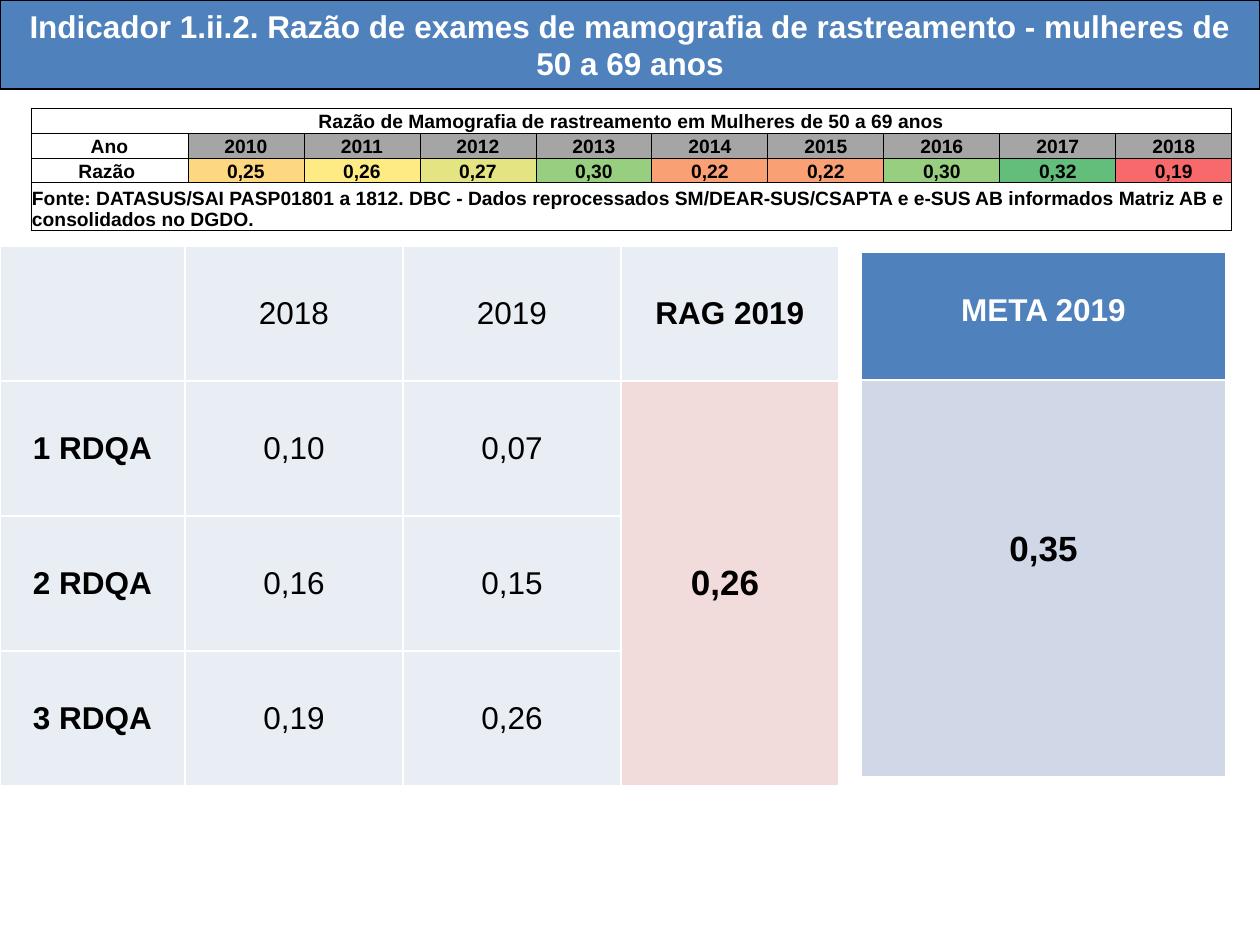
from dataclasses import dataclass
from typing import Optional

from lxml import etree
from pptx import Presentation
from pptx.dml.color import RGBColor
from pptx.enum.shapes import MSO_SHAPE
from pptx.enum.text import MSO_ANCHOR, PP_ALIGN
from pptx.oxml.ns import qn
from pptx.util import Emu, Pt

PX_PER_INCH = 126
RECT = MSO_SHAPE.RECTANGLE
CENTER, LEFT = PP_ALIGN.CENTER, PP_ALIGN.LEFT
TOP, MIDDLE, BOTTOM = MSO_ANCHOR.TOP, MSO_ANCHOR.MIDDLE, MSO_ANCHOR.BOTTOM

BLACK = RGBColor(0x00, 0x00, 0x00)
WHITE = RGBColor(0xFF, 0xFF, 0xFF)
BLUE = RGBColor(0x4F, 0x81, 0xBD)
PALE_BLUE = RGBColor(0xE9, 0xED, 0xF4)
LIGHT_BLUE = RGBColor(0xD0, 0xD8, 0xE8)
PINK = RGBColor(0xF2, 0xDC, 0xDB)
GRAY = RGBColor(0xA5, 0xA5, 0xA5)
AMBER = RGBColor(0xFD, 0xD8, 0x80)
YELLOW = RGBColor(0xFF, 0xEB, 0x84)
LIME = RGBColor(0xE5, 0xE4, 0x83)
GREEN = RGBColor(0x98, 0xCE, 0x7F)
ORANGE = RGBColor(0xFA, 0xA0, 0x75)
DARK_GREEN = RGBColor(0x63, 0xBE, 0x7B)
RED = RGBColor(0xF8, 0x69, 0x6B)

TITLE = ("Indicador 1.ii.2. Razão de exames de mamografia de rastreamento "
         "- mulheres de 50 a 69 anos")
HISTORY_TITLE = "Razão de Mamografia de rastreamento em Mulheres de 50 a 69 anos"
SOURCE = ("Fonte: DATASUS/SAI PASP01801 a 1812. DBC - Dados reprocessados "
          "SM/DEAR-SUS/CSAPTA e e-SUS AB informados Matriz AB e consolidados no DGDO.")
RATIOS = [("0,25", AMBER), ("0,26", YELLOW), ("0,27", LIME), ("0,30", GREEN),
          ("0,22", ORANGE), ("0,22", ORANGE), ("0,30", GREEN),
          ("0,32", DARK_GREEN), ("0,19", RED)]
FIRST_YEAR = 2010


@dataclass
class Cell:
    text: str = ""
    fill: Optional[RGBColor] = None
    size: int = 18
    bold: bool = True
    color: RGBColor = BLACK
    align: PP_ALIGN = CENTER
    anchor: MSO_ANCHOR = MIDDLE
    margin_top: int = 0
    margin_side: int = 0
    rows: int = 1
    cols: int = 1


@dataclass
class Grid:
    left: int
    top: int
    widths: list[int]
    heights: list[int]
    border: RGBColor
    border_pt: float
    cells: dict[tuple[int, int], Cell]


def px(n: int) -> Emu:
    return Emu(round(n * 914400 / PX_PER_INCH))


def write(tf, text: str, size: int, bold: bool, color: RGBColor, align: PP_ALIGN) -> None:
    p = tf.paragraphs[0]
    p.alignment = align
    r = p.add_run()
    r.text = text
    for name, value in {"name": "Arial", "size": Pt(size), "bold": bold}.items():
        setattr(r.font, name, value)
    r.font.color.rgb = color


def set_borders(cell, color: RGBColor, width_pt: float) -> None:
    tc_pr = cell._tc.get_or_add_tcPr()
    for i, side in enumerate(("a:lnL", "a:lnR", "a:lnT", "a:lnB")):
        ln = etree.Element(qn(side), w=str(Pt(width_pt)))
        fill = etree.SubElement(ln, qn("a:solidFill"))
        etree.SubElement(fill, qn("a:srgbClr"), val=str(color))
        tc_pr.insert(i, ln)


def format_cell(cell, c: Cell) -> None:
    values = {"margin_left": px(c.margin_side), "margin_right": px(c.margin_side),
              "margin_top": px(c.margin_top), "margin_bottom": 0,
              "vertical_anchor": c.anchor}
    for name, value in values.items():
        setattr(cell, name, value)
    if c.fill is None:
        cell.fill.background()
    else:
        cell.fill.solid()
        cell.fill.fore_color.rgb = c.fill
    if c.text:
        write(cell.text_frame, c.text, c.size, c.bold, c.color, c.align)


def add_grid(s, g: Grid) -> None:
    tbl = s.shapes.add_table(len(g.heights), len(g.widths), px(g.left), px(g.top),
                             px(sum(g.widths)), px(sum(g.heights))).table
    tbl.first_row = tbl.horz_banding = False
    for column, width in zip(tbl.columns, g.widths):
        column.width = px(width)
    for row, height in zip(tbl.rows, g.heights):
        row.height = px(height)
    for r in range(len(g.heights)):
        for col in range(len(g.widths)):
            c = g.cells.get((r, col), Cell())
            cell = tbl.cell(r, col)
            format_cell(cell, c)
            set_borders(cell, g.border, g.border_pt)
            if c.rows > 1 or c.cols > 1:
                cell.merge(tbl.cell(r + c.rows - 1, col + c.cols - 1))


def add_title(s) -> None:
    sp = s.shapes.add_shape(RECT, 0, 0, px(1260), px(89))
    sp.shadow.inherit = False
    sp.fill.solid()
    sp.fill.fore_color.rgb = BLUE
    sp.line.color.rgb = BLACK
    sp.line.width = Pt(0.75)
    tf = sp.text_frame
    tf.word_wrap = True
    tf.vertical_anchor = MIDDLE
    write(tf, TITLE, 18, True, WHITE, CENTER)


def results_grid() -> Grid:
    rows = [("", "2018", "2019", "RAG 2019"),
            ("1 RDQA", "0,10", "0,07"),
            ("2 RDQA", "0,16", "0,15"),
            ("3 RDQA", "0,19", "0,26")]
    cells = {(r, c): Cell(text, PALE_BLUE, bold=c in (0, 3))
             for r, row in enumerate(rows) for c, text in enumerate(row)}
    cells[1, 3] = Cell("0,26\u00a0".replace("\u00a0", " "), PINK, size=20, rows=3)
    return Grid(0, 246, [185] + [218] * 3, [135] * 4, WHITE, 1, cells)


def target_grid() -> Grid:
    cells = {(0, 0): Cell("META 2019", BLUE, color=WHITE, anchor=TOP, margin_top=41),
             (1, 0): Cell("0,35", LIGHT_BLUE, size=20, anchor=TOP, margin_top=150)}
    return Grid(861, 252, [365], [128, 397], WHITE, 1, cells)


def history_grid() -> Grid:
    style = {"size": 11, "anchor": BOTTOM, "margin_top": 1, "margin_side": 1}
    n = len(RATIOS)
    cells = {(0, 0): Cell(HISTORY_TITLE, cols=n + 1, **style),
             (1, 0): Cell("Ano", **style),
             (2, 0): Cell("Razão ", **style),
             (3, 0): Cell(SOURCE, cols=n + 1, align=LEFT, **style)}
    for i, (ratio, fill) in enumerate(RATIOS):
        cells[1, i + 1] = Cell(str(FIRST_YEAR + i), GRAY, **style)
        cells[2, i + 1] = Cell(ratio, fill, **style)
    return Grid(31, 108, [157] + [116] * n, [25, 25, 25, 48], BLACK, 0.5, cells)


def main() -> None:
    prs = Presentation()
    prs.slide_width, prs.slide_height = px(1260), px(945)
    s = prs.slides.add_slide(prs.slide_layouts[6])
    add_title(s)
    for grid in (results_grid(), target_grid(), history_grid()):
        add_grid(s, grid)
    prs.save("out.pptx")


if __name__ == "__main__":
    main()
